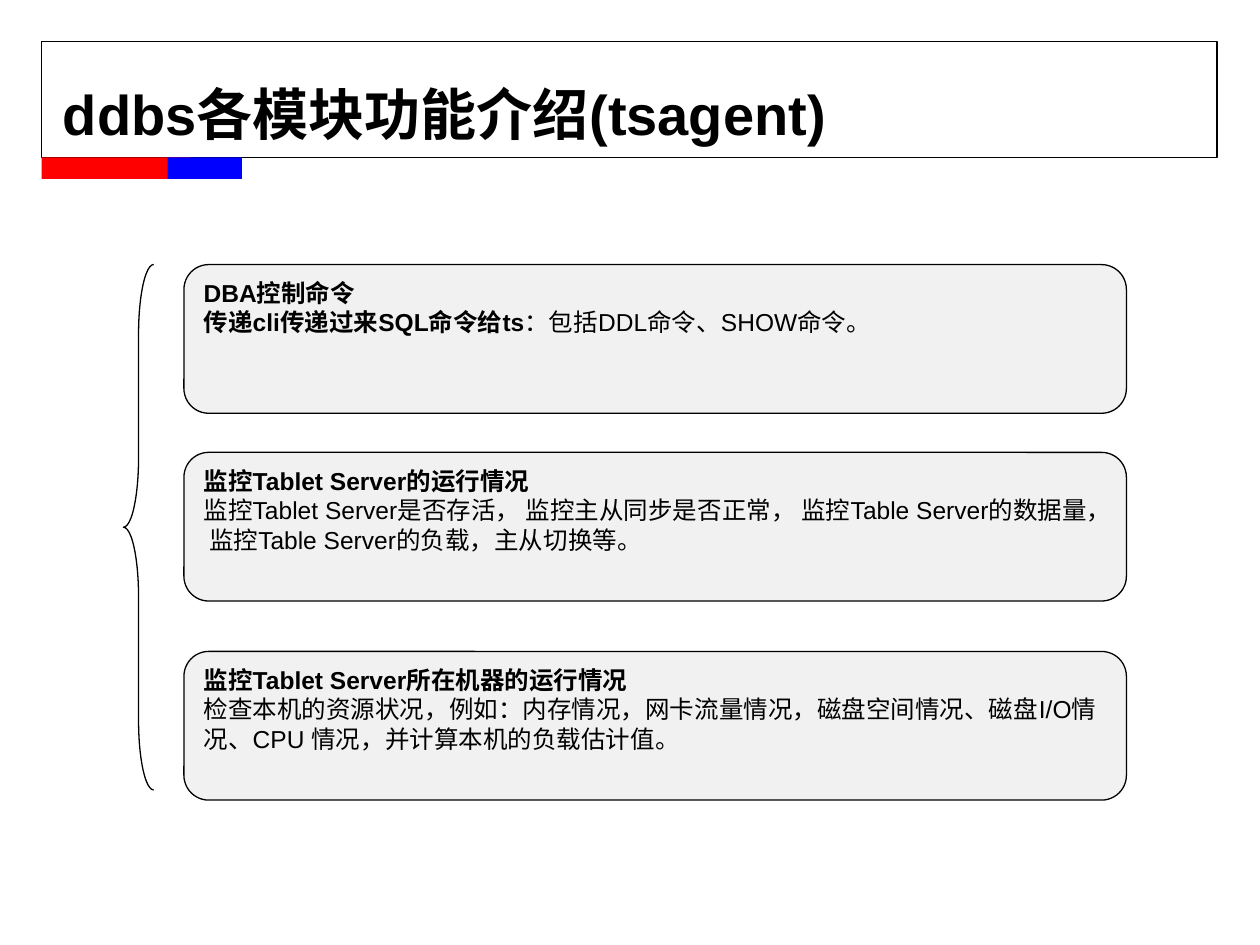
import pptx
import pptx.util
import pptx.dml.color
import pptx.enum.shapes
import pptx.enum.text

Inches = pptx.util.Inches
SHAPE = pptx.enum.shapes.MSO_SHAPE
ANCHOR = pptx.enum.text.MSO_ANCHOR
ALIGN = pptx.enum.text.PP_ALIGN

COLORS = {"ink": "000000", "red": "FF0000", "blue": "0000FF", "card": "F1F1F1"}


def rgb(name):
    return pptx.dml.color.RGBColor.from_string(COLORS[name])


class SlideBuilder:
    """Holds the style and the current slide."""

    font = "Arial"
    line_width = pptx.util.Pt(0.75)

    def __init__(self, slide):
        self.slide = slide

    def shape(self, kind, box, fill=None, line=None):
        sp = self.slide.shapes.add_shape(kind, *map(Inches, box))
        sp.shadow.inherit = False
        if fill:
            sp.fill.solid()
            sp.fill.fore_color.rgb = rgb(fill)
        else:
            sp.fill.background()
        if line:
            sp.line.color.rgb = rgb(line)
            sp.line.width = self.line_width
        else:
            sp.line.fill.background()
        return sp

    def run(self, p, text, size, bold):
        r = p.add_run()
        r.text = text
        style = {"name": self.font, "size": pptx.util.Pt(size), "bold": bold}
        for key, value in style.items():
            setattr(r.font, key, value)
        r.font.color.rgb = rgb("ink")

    def title(self, box, text):
        tf = self.slide.shapes.add_textbox(*map(Inches, box)).text_frame
        frame = {"word_wrap": True, "vertical_anchor": ANCHOR.MIDDLE,
                 "margin_left": 0, "margin_right": 0,
                 "margin_top": 0, "margin_bottom": 0}
        for key, value in frame.items():
            setattr(tf, key, value)
        p = tf.paragraphs[0]
        p.line_spacing = 0.93
        self.run(p, text, 32, True)

    def brace(self, box, curve):
        sp = self.shape(SHAPE.LEFT_BRACE, box, line="ink")
        sp.adjustments[0] = curve
        sp.adjustments[1] = 0.5

    def card(self, box, paragraphs):
        sp = self.shape(SHAPE.ROUNDED_RECTANGLE, box, "card", "ink")
        tf = sp.text_frame
        tf.word_wrap = True
        tf.vertical_anchor = ANCHOR.TOP
        for i, runs in enumerate(paragraphs):
            p = tf.add_paragraph() if i else tf.paragraphs[0]
            p.alignment = ALIGN.LEFT
            for text, bold in runs:
                self.run(p, text, 14, bold)


CARDS = [
    (2.1, [[("DBA控制命令", True)],
           [("传递cli传递过来SQL命令给ts", True),
            ("：包括DDL命令、SHOW命令。", False)]]),
    (3.59, [[("监控Tablet Server的运行情况", True)],
            [("监控Tablet Server是否存活， 监控主从同步是否正常， "
              "监控Table Server的数据量， 监控Table Server的负载，主从切换等。", False)]]),
    (5.17, [[("监控Tablet Server所在机器的运行情况", True)],
            [("检查本机的资源状况，例如：内存情况，网卡流量情况，磁盘空间情况、"
              "磁盘I/O情况、CPU 情况，并计算本机的负载估计值。", False)]]),
]


def main():
    prs = pptx.Presentation()
    prs.slide_width, prs.slide_height = Inches(10), Inches(7.5)
    s = SlideBuilder(prs.slides.add_slide(prs.slide_layouts[6]))

    # Title frame with its two colour bars
    s.shape(SHAPE.RECTANGLE, (0.33, 0.33, 9.33, 0.92), line="ink")
    s.shape(SHAPE.RECTANGLE, (0.33, 1.25, 1.18, 0.17), "red")
    s.shape(SHAPE.RECTANGLE, (1.33, 1.25, 0.59, 0.17), "blue")
    s.title((0.5, 0.3, 9, 1.25), "ddbs各模块功能介绍(tsagent)")

    # Brace that groups the function cards
    s.brace((0.98, 2.1, 0.24, 4.17), 2.3)
    for top, paragraphs in CARDS:
        s.card((1.46, top, 7.48, 1.18), paragraphs)

    prs.save("out.pptx")


if __name__ == "__main__":
    main()
